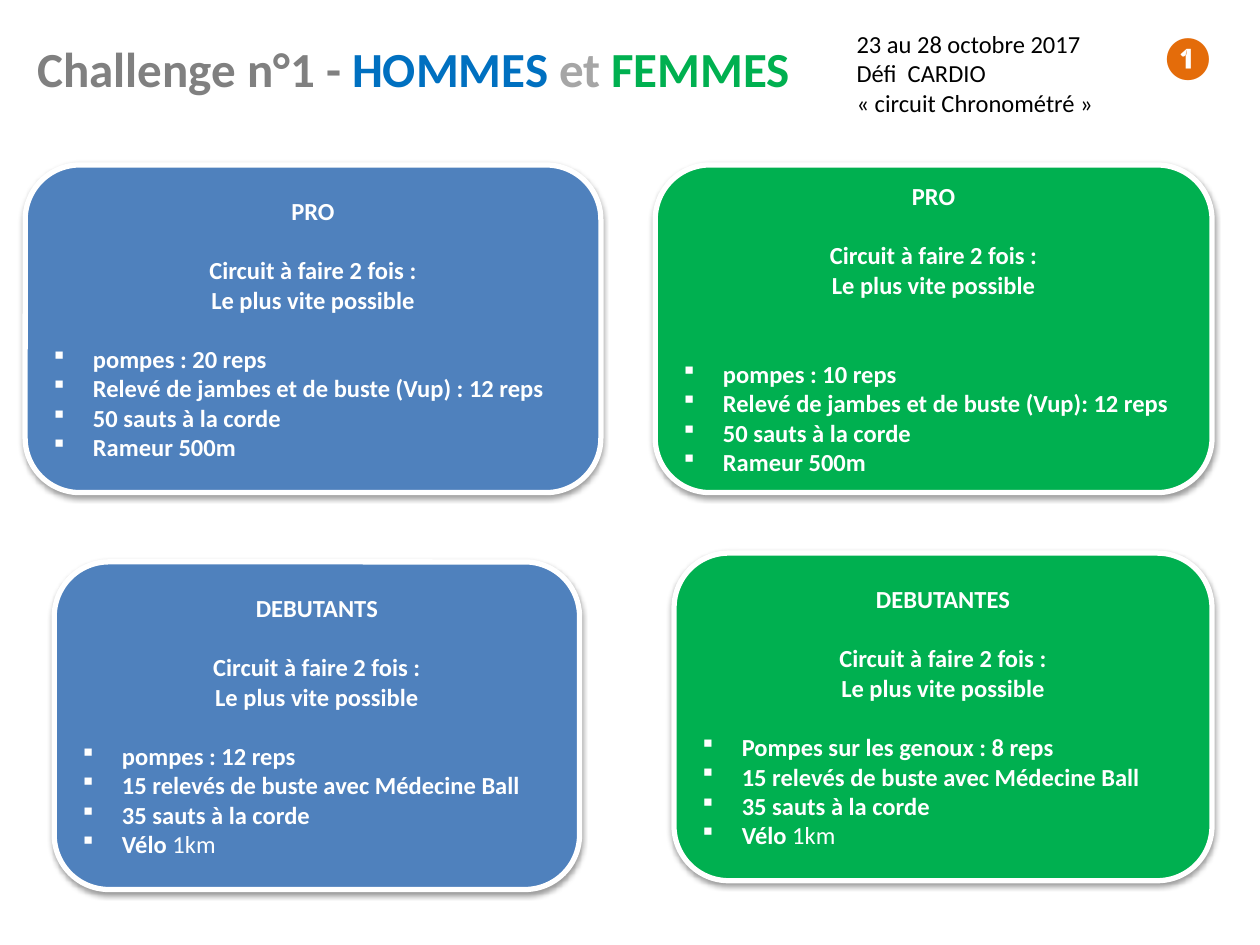
from lxml import etree
from pptx import Presentation
from pptx.dml.color import RGBColor
from pptx.enum.shapes import MSO_SHAPE
from pptx.enum.text import MSO_ANCHOR, PP_ALIGN
from pptx.oxml.ns import qn
from pptx.util import Pt

ROUNDED = MSO_SHAPE.ROUNDED_RECTANGLE
TOP, MIDDLE = MSO_ANCHOR.TOP, MSO_ANCHOR.MIDDLE
LEFT, CENTER = PP_ALIGN.LEFT, PP_ALIGN.CENTER
WHITE = RGBColor(0xFF, 0xFF, 0xFF)
BLACK = RGBColor(0x00, 0x00, 0x00)
GRAY = RGBColor(0x80, 0x80, 0x80)
LIGHT_GRAY = RGBColor(0xA6, 0xA6, 0xA6)
BLUE = RGBColor(0x00, 0x70, 0xC0)
STEEL = RGBColor(0x4F, 0x81, 0xBD)
GREEN = RGBColor(0x00, 0xB0, 0x50)
ORANGE = RGBColor(0xE4, 0x6C, 0x0A)
LINE = 17.1
INDENT = 22.5


def add_run(p, text, size=14, color=BLACK, bold=False):
    r = p.add_run()
    r.text = text
    r.font.name = "Calibri"
    r.font.size = Pt(size)
    r.font.color.rgb = color
    r.font.bold = bold


class ChallengeSlide:
    """Draws the challenge slide's text boxes and circuit cards in one style."""

    def __init__(self, prs):
        self.s = prs.slides.add_slide(prs.slide_layouts[6])

    def text(self, x, y, w, h, paragraphs, anchor=TOP, align=LEFT, wrap=True):
        tf = self.s.shapes.add_textbox(Pt(x), Pt(y), Pt(w), Pt(h)).text_frame
        tf.word_wrap = wrap
        tf.vertical_anchor = anchor
        for i, runs in enumerate(paragraphs):
            p = tf.add_paragraph() if i else tf.paragraphs[0]
            p.alignment = align
            for text, style in runs:
                add_run(p, text, **style)

    def card(self, x, y, w, fill, level, exercises, ending, gap=LINE):
        sp = self.s.shapes.add_shape(ROUNDED, Pt(x), Pt(y), Pt(w), Pt(187.2))
        sp.fill.solid()
        sp.fill.fore_color.rgb = fill
        sp.line.color.rgb = WHITE
        sp.line.width = Pt(3)
        self.shadow(sp)
        tf = sp.text_frame
        tf.word_wrap = True
        tf.vertical_anchor = MIDDLE
        p = tf.paragraphs[0]
        p.alignment = CENTER
        add_run(p, level, color=WHITE, bold=True)
        for text, space in (("Circuit à faire 2 fois :", LINE), ("Le plus vite possible", 0)):
            p = tf.add_paragraph()
            p.alignment = CENTER
            p.space_before = Pt(space)
            add_run(p, text, color=WHITE, bold=True)
        for i, text in enumerate(exercises):
            p = self.bullet(tf)
            p.space_before = Pt(0 if i else gap)
            add_run(p, text, color=WHITE, bold=True)
        add_run(p, ending, color=WHITE)

    def bullet(self, tf):
        p = tf.add_paragraph()
        p.alignment = LEFT
        pPr = p._p.get_or_add_pPr()
        pPr.set("marL", str(Pt(INDENT)))
        pPr.set("indent", str(Pt(-INDENT)))
        etree.SubElement(pPr, qn("a:buFont"), typeface="Wingdings")
        etree.SubElement(pPr, qn("a:buChar"), char="§")
        return p

    def shadow(self, sp):
        sp.shadow.inherit = False
        effects = sp._element.spPr.find(qn("a:effectLst"))
        outer = etree.SubElement(effects, qn("a:outerShdw"), blurRad=str(Pt(3.1)),
                                 dist=str(Pt(1.6)), dir="5400000", rotWithShape="0")
        color = etree.SubElement(outer, qn("a:srgbClr"), val="000000")
        etree.SubElement(color, qn("a:alpha"), val="38000")


def main():
    prs = Presentation()
    prs.slide_width, prs.slide_height = Pt(720), Pt(540)
    slide = ChallengeSlide(prs)
    title = (("Challenge n°1 - ", GRAY), ("HOMMES ", BLUE), ("et ", LIGHT_GRAY), ("FEMMES", GREEN))
    slide.text(14.4, 13, 680.4, 51.1,
               [[(text, dict(size=28, color=color, bold=True)) for text, color in title]],
               anchor=MIDDLE)
    slide.text(655.9, 13.7, 36, 36, [[("❶", dict(size=24, color=ORANGE, bold=True))]],
               align=CENTER, wrap=False)
    event = ("23 au 28 octobre 2017", "Défi  CARDIO", "« circuit Chronométré »")
    slide.text(482.4, 13, 177.1, 58.3, [[(text, {})] for text in event])

    pro = ("50 sauts à la corde", "Rameur 500m")
    beginner = ("15 relevés de buste avec Médecine Ball", "35 sauts à la corde", "Vélo")
    slide.card(14.4, 94.3, 329, STEEL, "PRO",
               ("pompes : 20 reps", "Relevé de jambes et de buste (Vup) : 12 reps", *pro), "")
    slide.card(374.4, 94.3, 318.2, GREEN, "PRO",
               ("pompes : 10 reps", "Relevé de jambes et de buste (Vup): 12 reps", *pro), "",
               gap=2 * LINE)
    slide.card(31, 321.1, 300.2, STEEL, "DEBUTANTS", ("pompes : 12 reps", *beginner), " 1km")
    slide.card(385.2, 316.1, 307.4, GREEN, "DEBUTANTES",
               ("Pompes sur les genoux : 8 reps", *beginner), " 1km")
    prs.save("out.pptx")


if __name__ == "__main__":
    main()
